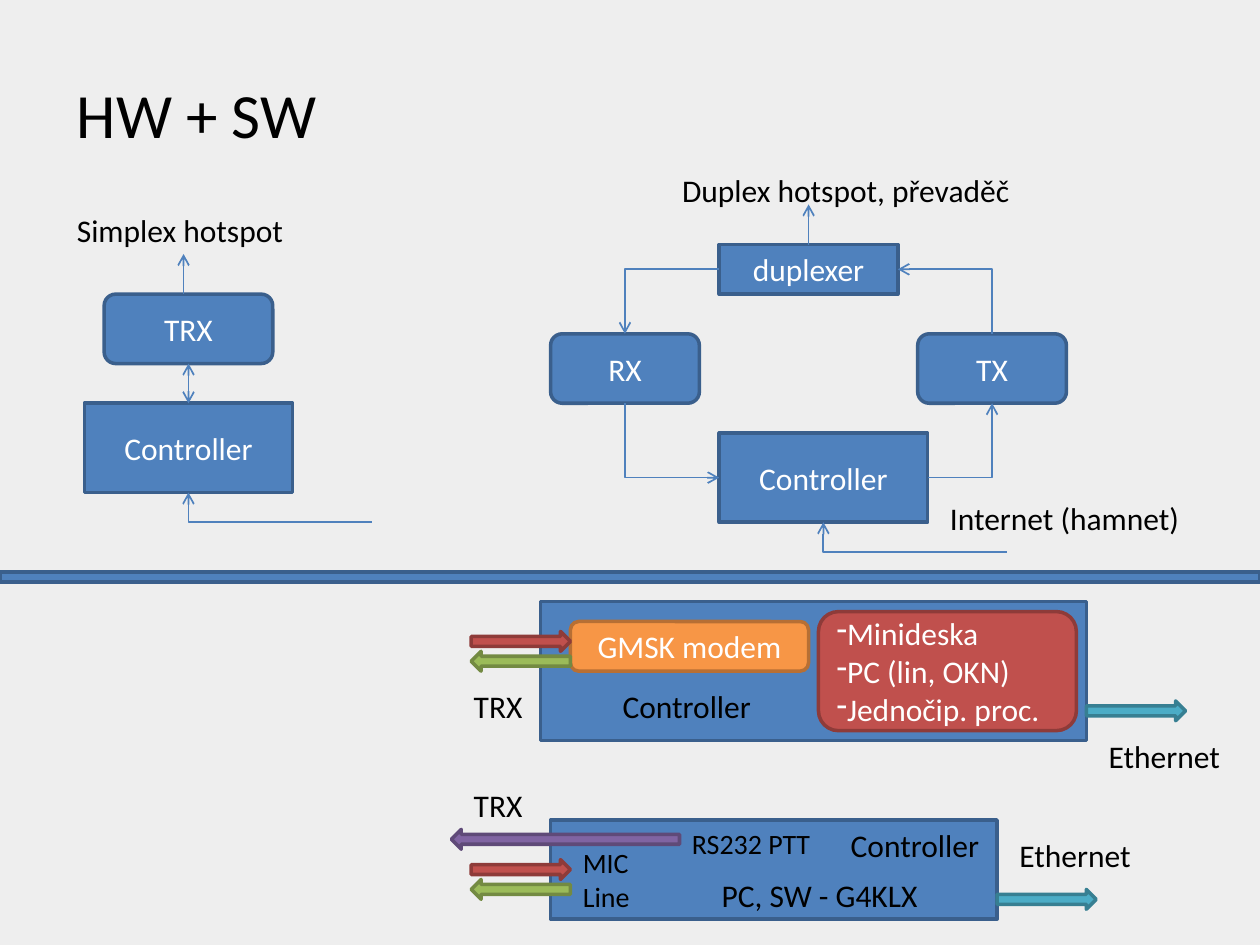
"""Build the HW + SW slide with hotspot wiring and controller variants."""
from lxml import etree
from pptx import Presentation
from pptx import util as u
from pptx.dml.color import RGBColor
from pptx.enum import shapes, text
from pptx.oxml.ns import qn

COLORS = {
    "background": "EEEEEE", "black": "000000", "white": "FFFFFF",
    "blue": "4F81BD", "blue edge": "3A5F8C",
    "orange": "F79646", "orange edge": "B76F34",
    "red": "C0504D", "red edge": "8E3B39",
    "green": "9BBB59", "green edge": "738A42",
    "teal": "4BACC6", "teal edge": "377F92",
    "purple": "8064A2", "purple edge": "5F4A78",
}
RECT = shapes.MSO_SHAPE.RECTANGLE
ROUND = shapes.MSO_SHAPE.ROUNDED_RECTANGLE
ARROW = shapes.MSO_SHAPE.RIGHT_ARROW
TOP, LEFT, BOTTOM, RIGHT = range(4)

TITLE = ("HW + SW", 1.3, 0, 22.86, 3.18)
BOXES = [
    ("duplexer", RECT, "blue", 14.5, 4.93, 3.6, 1, "duplexer"),
    ("receiver", ROUND, "blue", 11.1, 6.73, 3, 1.4, "RX"),
    ("transmitter", ROUND, "blue", 18.5, 6.73, 3, 1.4, "TX"),
    ("duplex controller", RECT, "blue", 14.5, 8.73, 4.2, 1.8, "Controller"),
    ("simplex controller", RECT, "blue", 1.7, 8.13, 4.2, 1.8, "Controller"),
    ("transceiver", ROUND, "blue", 2.1, 5.93, 3.4, 1.4, "TRX"),
    ("divider", RECT, "blue", 0, 11.53, 25.4, 0.2, ""),
    ("modem variant", RECT, "blue", 10.9, 12.13, 11, 2.8, ""),
    ("modem", ROUND, "orange", 11.5, 12.53, 4.8, 1, "GMSK modem"),
    ("computers", ROUND, "red", 16.5, 12.33, 5.2, 2.4, ""),
    ("sound card variant", RECT, "blue", 11.1, 16.53, 9, 2, ""),
]
COMPUTERS = ["Minideska", "PC (lin, OKN)", "Jednočip. proc."]
BLOCK_ARROWS = [
    ("red", 9.5, 12.73, 2, False),
    ("green", 9.5, 13.13, 2, True),
    ("teal", 21.9, 14.13, 2, False),
    ("red", 9.5, 17.33, 2, False),
    ("green", 9.5, 17.73, 2, True),
    ("purple", 9.1, 16.72, 4.6, True),
    ("teal", 20.1, 17.93, 2, False),
]
ELBOWS = [
    (("duplexer", LEFT), ("receiver", TOP), "tailEnd"),
    (("duplexer", RIGHT), ("transmitter", TOP), "headEnd"),
    (("duplex controller", LEFT), ("receiver", BOTTOM), "headEnd"),
    (("duplex controller", RIGHT), ("transmitter", BOTTOM), "tailEnd"),
    ((20.3, 11.13), ("duplex controller", BOTTOM), "tailEnd"),
    ((7.5, 10.53), ("simplex controller", BOTTOM), "tailEnd"),
]
STRAIGHTS = [
    (("duplexer", TOP), (16.3, 4.12), ["tailEnd"]),
    (("simplex controller", TOP), ("transceiver", BOTTOM), ["headEnd", "tailEnd"]),
    ((3.7, 5.93), (3.7, 5.12), ["tailEnd"]),
]
LABELS = [
    (["Internet (hamnet)"], 18.9, 9.93, 5.23, 18),
    (["Simplex hotspot"], 1.3, 4.12, 4.85, 18),
    (["Duplex hotspot, převaděč"], 13.5, 3.33, 7.8, 18),
    (["Controller"], 12.3, 13.72, 3.18, 18),
    (["Ethernet"], 22.1, 14.73, 2.84, 18),
    (["TRX"], 9.3, 13.72, 1.63, 18),
    (["MIC", "Line"], 11.5, 16.92, 1.52, 16),
    (["RS232 PTT"], 13.7, 16.53, 3.07, 16),
    (["PC, SW - G4KLX"], 14.3, 17.53, 5, 18),
    (["Ethernet"], 20.3, 16.72, 2.84, 18),
    (["Controller"], 16.9, 16.53, 3.18, 18),
    (["TRX"], 9.3, 15.72, 1.63, 18),
]


def rgb(name):
    return RGBColor.from_string(COLORS[name])


def write(frame, lines, size, color, align=text.PP_ALIGN.LEFT, bullet=None):
    for index, line in enumerate(lines):
        paragraph = frame.paragraphs[0] if index == 0 else frame.add_paragraph()
        paragraph.alignment = align
        if bullet:
            properties = paragraph._p.get_or_add_pPr()
            properties.set("marL", "0")
            properties.set("indent", "0")
            etree.SubElement(properties, qn("a:buChar"), char=bullet)
        run = paragraph.add_run()
        run.text = line
        run.font.name = "Calibri"
        run.font.size = u.Pt(size)
        run.font.color.rgb = rgb(color)


def add_box(slide, kind, color, left, top, width, height):
    shape = slide.shapes.add_shape(kind, *map(u.Cm, (left, top, width, height)))
    shape.shadow.inherit = False
    shape.fill.solid()
    shape.fill.fore_color.rgb = rgb(color)
    shape.line.color.rgb = rgb(color + " edge")
    shape.line.width = u.Pt(2)
    return shape


def add_label(slide, lines, left, top, width, height, size):
    frame = slide.shapes.add_textbox(*map(u.Cm, (left, top, width, height))).text_frame
    frame.word_wrap = False
    write(frame, lines, size, "black")
    return frame


def add_link(slide, boxes, kind, start, end, heads):
    joined = [isinstance(place[0], str) for place in (start, end)]
    points = [(0, 0) if join else tuple(map(u.Cm, place))
              for join, place in zip(joined, (start, end))]
    connector = slide.shapes.add_connector(kind, *points[0], *points[1])
    if joined[0]:
        connector.begin_connect(boxes[start[0]], start[1])
    if joined[1]:
        connector.end_connect(boxes[end[0]], end[1])
    connector.line.color.rgb = rgb("blue")
    connector.line.width = u.Pt(1)
    line = connector.line._get_or_add_ln()
    for head in heads:
        etree.SubElement(line, qn("a:" + head), type="arrow")
    properties = connector._element.spPr
    etree.SubElement(properties, qn("a:effectLst"))
    if kind == shapes.MSO_CONNECTOR.ELBOW:
        properties.find(qn("a:prstGeom")).set("prst", "bentConnector2")


def main():
    presentation = Presentation()
    presentation.slide_width, presentation.slide_height = u.Cm(25.4), u.Cm(19.05)
    slide = presentation.slides.add_slide(presentation.slide_layouts[6])
    slide.background.fill.solid()
    slide.background.fill.fore_color.rgb = rgb("background")

    title, *place = TITLE
    frame = add_label(slide, [title], *place, 36)
    frame.word_wrap = True
    frame.vertical_anchor = text.MSO_ANCHOR.BOTTOM

    boxes = {}
    for name, kind, color, left, top, width, height, caption in BOXES:
        boxes[name] = add_box(slide, kind, color, left, top, width, height)
        if caption:
            frame = boxes[name].text_frame
            write(frame, [caption], 18, "white", text.PP_ALIGN.CENTER)
    write(boxes["computers"].text_frame, COMPUTERS, 18, "white", bullet="-")

    for color, left, top, width, flipped in BLOCK_ARROWS:
        arrow = add_box(slide, ARROW, color, left, top, width, 0.4)
        if flipped:
            arrow._element.spPr.find(qn("a:xfrm")).set("flipH", "1")

    for start, end, head in ELBOWS:
        add_link(slide, boxes, shapes.MSO_CONNECTOR.ELBOW, start, end, [head])
    for start, end, heads in STRAIGHTS:
        add_link(slide, boxes, shapes.MSO_CONNECTOR.STRAIGHT, start, end, heads)

    for lines, left, top, width, size in LABELS:
        height = 0.25 + len(lines) * size * 0.043
        add_label(slide, lines, left, top, width, height, size)

    presentation.save("out.pptx")


if __name__ == "__main__":
    main()
